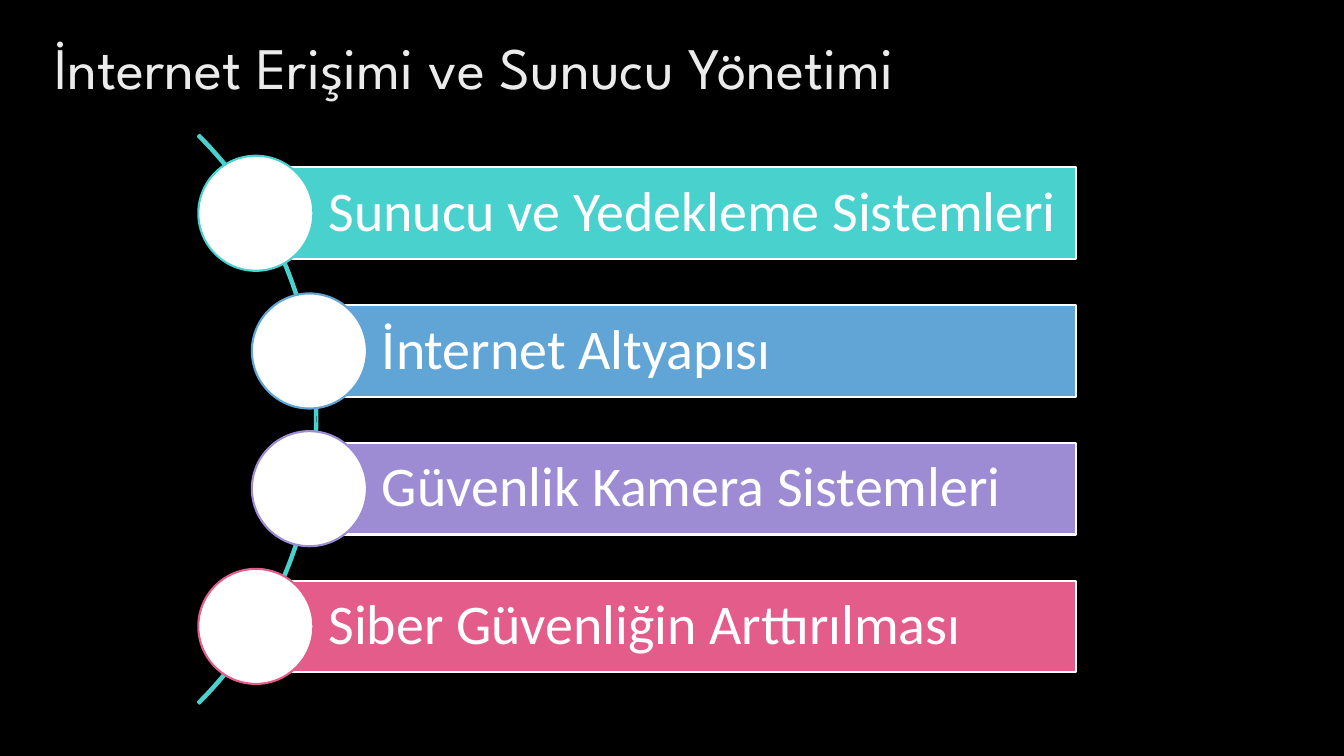
import pptx
import pptx.util
import pptx.dml.color
import pptx.enum.shapes
import pptx.enum.text

Cm, Pt = pptx.util.Cm, pptx.util.Pt
KIND = pptx.enum.shapes.MSO_SHAPE
ANCHOR = pptx.enum.text.MSO_ANCHOR
ALIGN = pptx.enum.text.PP_ALIGN

HUES = {"black": "000000", "white": "FFFFFF", "pale": "EBEBEB",
        "teal": "49D1CD", "blue": "61A5D6", "violet": "9D8CD3", "pink": "E45C8A"}

# label, colour, left edge of the bar in cm
ITEMS = [("Sunucu ve Yedekleme Sistemleri", "teal", 6.45),
         ("İnternet Altyapısı", "blue", 7.8),
         ("Güvenlik Kamera Sistemleri", "violet", 7.8),
         ("Siber Güvenliğin Arttırılması", "pink", 6.45)]
RIGHT, TOP, STEP, BAR, DISC = 27.13, 4.22, 3.47, 2.31, 2.9


def hue(name):
    return pptx.dml.color.RGBColor.from_string(HUES[name])


def apply(target, style):
    for key, value in style.items():
        setattr(target, key, value)


class Deck:
    title = {"size": Pt(42), "name": "League Spartan"}
    label = {"size": Pt(40), "name": "Calibri"}
    frame = {"word_wrap": True, "vertical_anchor": ANCHOR.MIDDLE,
             "margin_left": Cm(1.83), "margin_right": Cm(0.28),
             "margin_top": Cm(0.28), "margin_bottom": Cm(0.28)}
    para = {"line_spacing": 0.9, "alignment": ALIGN.LEFT}

    def __init__(self, wide, high):
        self.show = pptx.Presentation()
        apply(self.show, {"slide_width": Cm(wide), "slide_height": Cm(high)})
        self.slide = self.show.slides.add_slide(self.show.slide_layouts[6])
        back = self.slide.background.fill
        back.solid()
        back.fore_color.rgb = hue("black")

    def letter(self, frame, text, style, color):
        """Put styled text in the frame and return its paragraph."""
        para = frame.paragraphs[0]
        para.text = text
        apply(para.font, style)
        para.font.color.rgb = hue(color)
        return para

    def head(self, text, *box):
        frame = self.slide.shapes.add_textbox(*map(Cm, box)).text_frame
        frame.word_wrap = True
        self.letter(frame, text, self.title, "pale")

    def shape(self, kind, box, line, fill=None):
        item = self.slide.shapes.add_shape(kind, *map(Cm, box))
        item.shadow.inherit = False
        if fill:
            item.fill.solid()
            item.fill.fore_color.rgb = hue(fill)
        else:
            item.fill.background()
        item.line.color.rgb = hue(line)
        item.line.width = Pt(1.5)
        return item

    def arc(self, left, top, size, start, end):
        """Draw a thin arc between two angles in degrees."""
        item = self.shape(KIND.BLOCK_ARC, (left, top, size, size), "teal")
        for spot, value in enumerate((start * 0.6, end * 0.6, 0.003)):
            item.adjustments[spot] = value

    def bar(self, text, color, left, top):
        box = (left, top, RIGHT - left, BAR)
        frame = self.shape(KIND.RECTANGLE, box, "white", color).text_frame
        apply(frame, self.frame)
        apply(self.letter(frame, text, self.label, "white"), self.para)

    def disc(self, color, x, y):
        """Draw a circle centred on x, y."""
        box = (x - DISC / 2, y - DISC / 2, DISC, DISC)
        self.shape(KIND.OVAL, box, color, "white")


def main():
    deck = Deck(33.88, 19.05)
    deck.head("İnternet Erişimi ve Sunucu Yönetimi", 1.12, 0.64, 27.28, 2.06)
    deck.arc(-12.27, 0.43, 20.27, 315, 45)
    for row, (text, color, left) in enumerate(ITEMS):
        top = TOP + row * STEP
        deck.bar(text, color, left, top)
        deck.disc(color, left, top + BAR / 2)
    deck.show.save("out.pptx")


if __name__ == "__main__":
    main()
